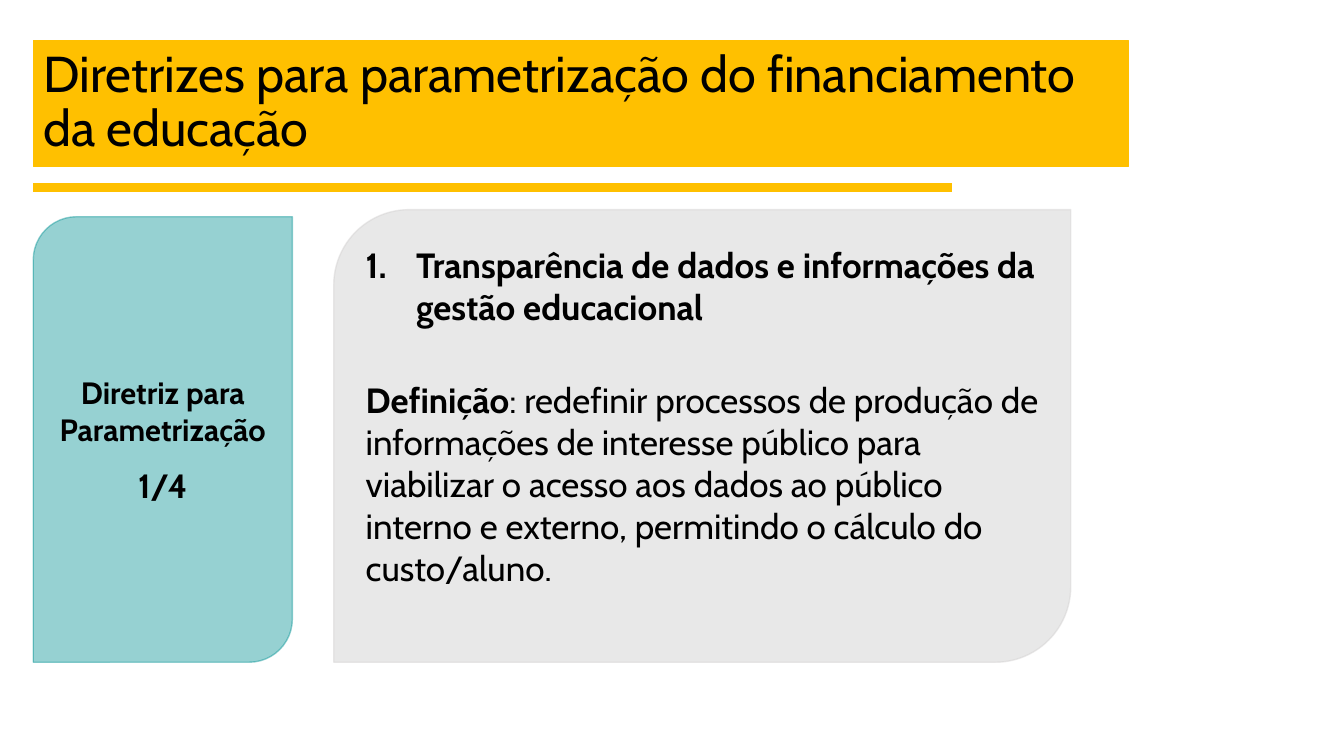
from dataclasses import dataclass

from lxml import etree
from pptx import Presentation
from pptx.dml.color import RGBColor
from pptx.enum import shapes, text
from pptx.oxml import ns
from pptx.util import Inches, Pt


@dataclass(frozen=True)
class Theme:
    font: str = "Cabin"
    ink: str = "000000"
    amber: str = "FFC000"
    teal: str = "009193"
    grey: str = "C9C9C9"
    grey_edge: str = "D0CECE"
    opacity: int = 41
    title: int = 36
    label: int = 22
    counter: int = 24
    body: int = 25


T = Theme()


def set_opacity(sp, percent):
    """Make the fill and outline of a shape partly transparent."""
    for color in sp._element.spPr.iter(ns.qn("a:srgbClr")):
        etree.SubElement(color, ns.qn("a:alpha"), val=str(percent * 1000))


def add_box(s, kind, box, fill, edge, weight, opacity=100):
    sp = s.shapes.add_shape(kind, *map(Inches, box))
    sp.shadow.inherit = False
    sp.line.width = Pt(weight)
    for paint, color in ((sp.fill, fill), (sp.line.fill, edge)):
        paint.solid()
        paint.fore_color.rgb = RGBColor.from_string(color)
    if opacity < 100:
        set_opacity(sp, opacity)
    sp.text_frame.word_wrap = True
    sp.text_frame.vertical_anchor = text.MSO_ANCHOR.MIDDLE
    return sp


def add_rule(s, start, end, color, weight):
    line = s.shapes.add_connector(
        shapes.MSO_CONNECTOR.STRAIGHT, *map(Inches, start + end))
    line.line.color.rgb = RGBColor.from_string(color)
    line.line.width = Pt(weight)
    etree.SubElement(line._element.spPr, ns.qn("a:effectLst"))


def add_paragraph(tf, runs, size, align=text.PP_ALIGN.LEFT, before=0,
                  spacing=None, numbered=False):
    """Write (wording, bold) runs into the next paragraph of a frame."""
    first = tf.paragraphs[0]
    p = tf.add_paragraph() if first.runs else first
    if numbered:
        pPr = p._p.get_or_add_pPr()
        pPr.set("marL", str(Inches(0.5)))
        pPr.set("indent", str(Inches(-0.5)))
        etree.SubElement(pPr, ns.qn("a:buFont"), typeface="+mj-lt")
        etree.SubElement(pPr, ns.qn("a:buAutoNum"), type="arabicPeriod")
    p.alignment = align
    if before:
        p.space_before = Pt(before)
    if spacing:
        p.line_spacing = spacing
    for wording, bold in runs:
        r = p.add_run()
        r.text = wording
        r.font.name = T.font
        r.font.size = Pt(size)
        r.font.bold = bold
        r.font.color.rgb = RGBColor.from_string(T.ink)


def main():
    prs = Presentation()
    prs.slide_width, prs.slide_height = Inches(13.33), Inches(7.5)
    s = prs.slides.add_slide(prs.slide_layouts[6])
    shape_kinds = shapes.MSO_SHAPE

    # Title band and rule
    add_rule(s, (0.33, 1.86), (9.44, 1.86), T.amber, 6)
    title = add_box(s, shape_kinds.RECTANGLE, (0.33, 0.4, 10.86, 1.25),
                    T.amber, T.amber, 0.75)
    add_paragraph(
        title.text_frame,
        [("Diretrizes para parametrização do financiamento da educação", False)],
        T.title, spacing=0.9)

    # Guideline label
    label = add_box(s, shape_kinds.ROUND_2_DIAG_RECTANGLE,
                    (0.33, 2.15, 2.57, 4.42), T.teal, T.teal, 1, T.opacity)
    add_paragraph(label.text_frame, [("Diretriz para Parametrização", True)],
                  T.label, text.PP_ALIGN.CENTER)
    add_paragraph(label.text_frame, [("1/4", True)],
                  T.counter, text.PP_ALIGN.CENTER, before=12)

    # Guideline definition
    definition = add_box(s, shape_kinds.ROUND_2_DIAG_RECTANGLE,
                         (3.31, 2.08, 7.31, 4.49), T.grey, T.grey_edge, 1,
                         T.opacity)
    tf = definition.text_frame
    tf.vertical_anchor = text.MSO_ANCHOR.TOP
    tf.margin_top = Inches(0.12)
    add_paragraph(
        tf,
        [("Transparência de dados e informações da gestão educacional", True)],
        T.body, numbered=True)
    add_paragraph(
        tf,
        [("Definição", True),
         (": redefinir processos de produção de informações de interesse "
          "público para viabilizar o acesso aos dados ao público interno e "
          "externo, permitindo o cálculo do custo/aluno.", False)],
        T.body, before=36)

    prs.save("out.pptx")


if __name__ == "__main__":
    main()
